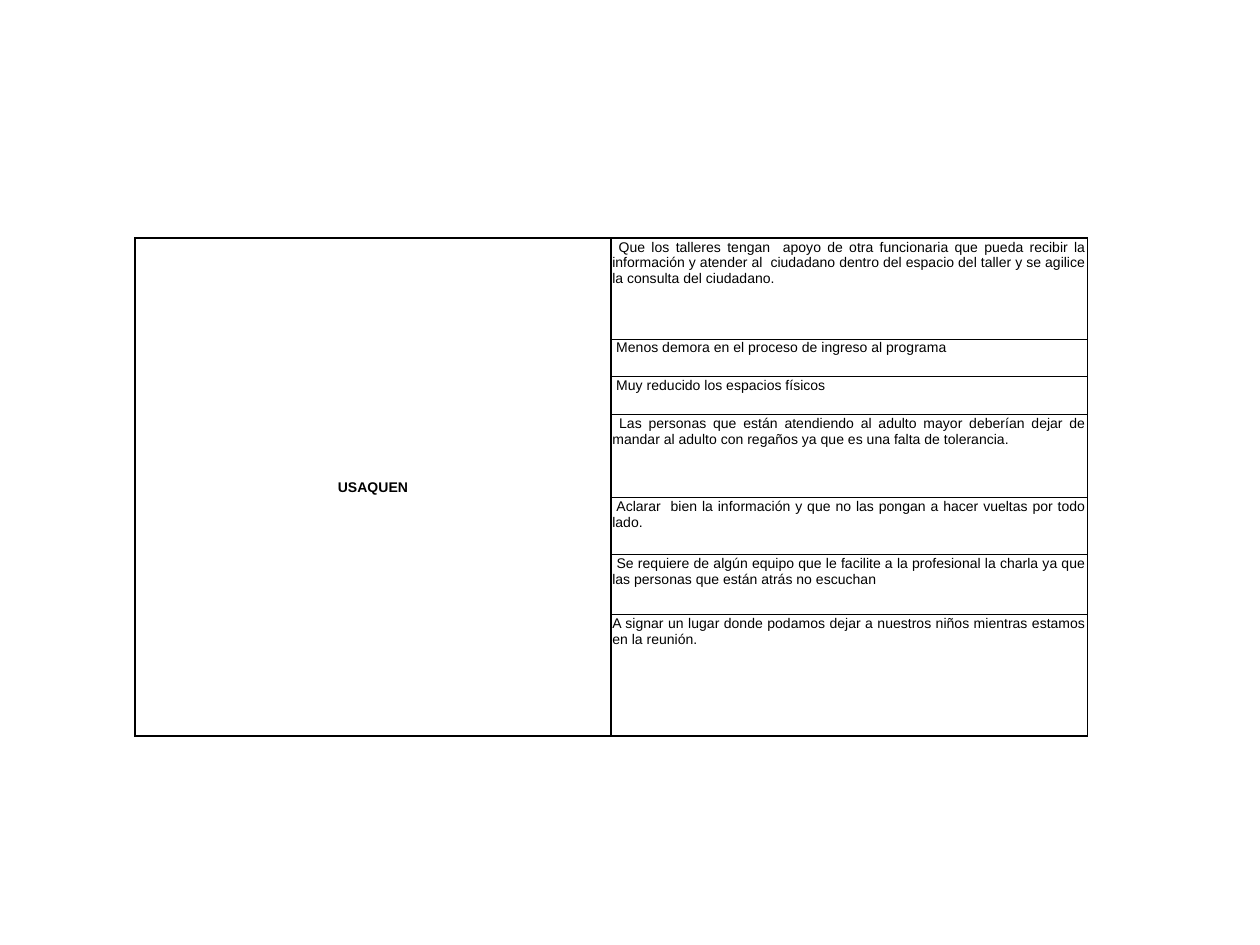
from dataclasses import dataclass

from lxml.etree import SubElement
from pptx import Presentation
from pptx.dml.color import RGBColor
from pptx.enum.text import MSO_ANCHOR as Anchor, PP_ALIGN as Align
from pptx.oxml.ns import qn
from pptx.table import _Cell as Cell
from pptx.util import Inches, Pt

COLORS = {"ink": "000000"}
FONT_NAME = "Arial"
FONT_SIZE = 8
THICK, THIN = 1, 0.5

# Table frame in inches
LEFT, TOP, COLUMN_WIDTH = 1.07, 1.89, 3.78
INSET = 0.01


@dataclass(frozen=True)
class Suggestion:
    text: str
    height: float


LOCALITY = "\u00a0USAQUEN".strip()
SUGGESTIONS = [
    Suggestion(" Que los talleres tengan  apoyo de otra funcionaria que pueda recibir la "
               "información y atender al  ciudadano dentro del espacio del taller y se "
               "agilice la consulta del ciudadano.", 0.8),
    Suggestion(" Menos demora en el proceso de ingreso al programa", 0.3),
    Suggestion(" Muy reducido los espacios físicos", 0.3),
    Suggestion(" Las personas que están atendiendo al adulto mayor deberían dejar de "
               "mandar al adulto con regaños ya que es una falta de tolerancia.", 0.66),
    Suggestion(" Aclarar  bien la información y que no las pongan a hacer vueltas por "
               "todo lado.", 0.45),
    Suggestion(" Se requiere de algún equipo que le facilite a la profesional la charla "
               "ya que las personas que están atrás no escuchan", 0.48),
    Suggestion("A signar un lugar donde podamos dejar a nuestros niños mientras estamos "
               "en la reunión.", 0.96),
]


def set_borders(cell: Cell, top: float, bottom: float) -> None:
    """Outline a cell; its left and right sides are always thick."""
    cell.fill.background()
    properties = cell._tc.get_or_add_tcPr()
    sides = {"a:lnL": THICK, "a:lnR": THICK, "a:lnT": top, "a:lnB": bottom}
    for position, (tag, width) in enumerate(sides.items()):
        line = SubElement(properties, qn(tag), w=str(Pt(width)))
        fill = SubElement(line, qn("a:solidFill"))
        SubElement(fill, qn("a:srgbClr"), val=COLORS["ink"])
        properties.insert(position, line)


def write_cell(cell: Cell, text: str, alignment: Align, anchor: Anchor,
               bold: bool = False) -> None:
    cell.margin_left = cell.margin_right = cell.margin_top = Inches(INSET)
    cell.margin_bottom = 0
    cell.vertical_anchor = anchor
    cell.text_frame.text = text
    paragraph = cell.text_frame.paragraphs[0]
    paragraph.alignment = alignment
    font = paragraph.runs[0].font
    font.name, font.size, font.bold = FONT_NAME, Pt(FONT_SIZE), bold
    font.color.rgb = RGBColor.from_string(COLORS["ink"])


def main() -> None:
    presentation = Presentation()
    presentation.slide_width, presentation.slide_height = Inches(10), Inches(7.5)
    slide = presentation.slides.add_slide(presentation.slide_layouts[6])

    # Table grid
    row_count = len(SUGGESTIONS)
    total_height = sum(suggestion.height for suggestion in SUGGESTIONS)
    table = slide.shapes.add_table(
        row_count, 2, Inches(LEFT), Inches(TOP),
        Inches(2 * COLUMN_WIDTH), Inches(total_height)).table
    table.first_row = table.horz_banding = False
    for column in table.columns:
        column.width = Inches(COLUMN_WIDTH)

    # Suggestions on the right, thick only along the outer edges
    for index, suggestion in enumerate(SUGGESTIONS):
        table.rows[index].height = Inches(suggestion.height)
        cell = table.cell(index, 1)
        write_cell(cell, suggestion.text, Align.JUSTIFY, Anchor.TOP)
        set_borders(cell, THICK if index == 0 else THIN,
                    THICK if index == row_count - 1 else THIN)
        set_borders(table.cell(index, 0), THICK, THICK)

    # Locality spanning every row on the left
    locality_cell = table.cell(0, 0)
    locality_cell.merge(table.cell(row_count - 1, 0))
    write_cell(locality_cell, LOCALITY, Align.CENTER, Anchor.MIDDLE, bold=True)

    presentation.save("out.pptx")


if __name__ == "__main__":
    main()
